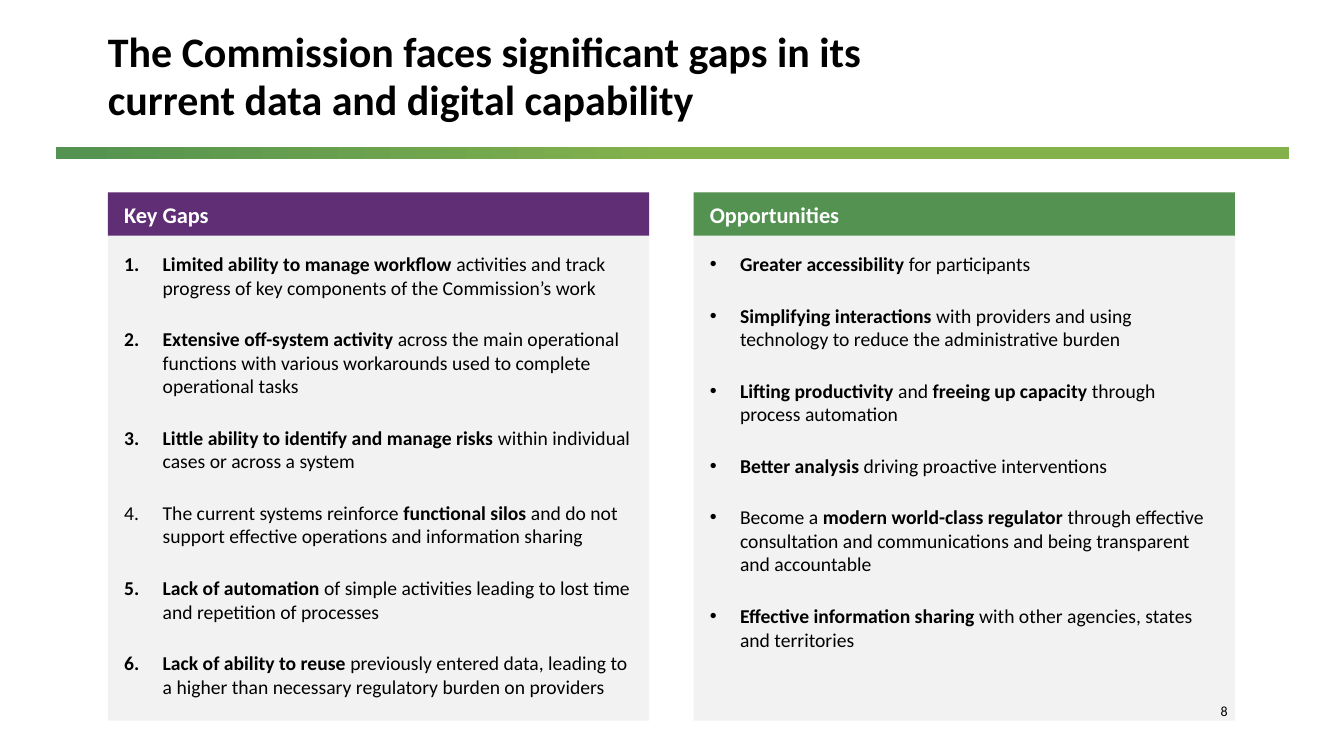
"""Build the slide on gaps and opportunities in data and digital capability."""
from dataclasses import dataclass

from lxml import etree
from pptx import Presentation
from pptx.dml.color import RGBColor
from pptx.enum.shapes import MSO_SHAPE
from pptx.enum.text import MSO_ANCHOR, MSO_AUTO_SIZE, PP_ALIGN
from pptx.oxml.ns import qn
from pptx.util import Cm, Pt

RECT = MSO_SHAPE.RECTANGLE
TOP, MIDDLE = MSO_ANCHOR.TOP, MSO_ANCHOR.MIDDLE
LEFT = PP_ALIGN.LEFT
NO_FIT = MSO_AUTO_SIZE.NONE

COLORS = {
    "text": "000000",
    "white": "FFFFFF",
    "panel": "F2F2F2",
    "purple": "5F2E74",
    "green": "539250",
    "lime": "83B14C",
}
PANEL_LEFT, PANEL_TOP = 2.72, 4.85
PANEL_WIDTH, PANEL_HEIGHT = 13.64, 13.31
PANEL_STEP = 14.76
HEADER_HEIGHT = 1.09
INSET = 0.41


@dataclass
class Panel:
    """A headed list; bold passages stand between double asterisks."""
    heading: str
    color: str
    indent: float
    bullet: tuple[str, str, str]
    items: list[str]


PANELS = [
    Panel("Key Gaps", "purple", 0.97, ("a:buAutoNum", "type", "arabicPeriod"), [
        "**Limited ability to manage workflow **activities and track progress "
        "of key components of the Commission’s work",
        "**Extensive off-system activity **across the main operational functions "
        "with various workarounds used to complete operational tasks",
        "**Little ability to identify and manage risks **within individual cases "
        "or across a system",
        "The current systems reinforce** functional silos **and do not support "
        "effective operations and information sharing",
        "**Lack of automation** of simple activities leading to lost time "
        "and repetition of processes",
        "**Lack of ability to reuse** previously entered data, leading to "
        "a higher than necessary regulatory burden on providers",
    ]),
    Panel("Opportunities", "green", 0.76, ("a:buChar", "char", "•"), [
        "**Greater accessibility **for participants",
        "**Simplifying interactions **with providers and using technology "
        "to reduce the administrative burden",
        "**Lifting productivity **and** freeing up capacity **through "
        "process automation",
        "**Better analysis **driving proactive interventions",
        "Become a **modern world-class regulator **through effective consultation "
        "and communications and being transparent and accountable",
        "**Effective information sharing **with other agencies, states "
        "and territories",
    ]),
]


def rgb(name: str) -> RGBColor:
    """Return the named colour."""
    return RGBColor.from_string(COLORS[name])


def apply(target, formats: dict) -> None:
    """Set every attribute in the dict on the target."""
    for name, value in formats.items():
        setattr(target, name, value)


def place(sp, left: float, top: float, width: float, height: float) -> None:
    """Move and size a shape, in centimetres."""
    apply(sp, {"left": Cm(left), "top": Cm(top),
               "width": Cm(width), "height": Cm(height)})


def set_frame(tf, anchor, side: float = 0, top: float = 0) -> None:
    """Set the wrapping, anchor and insets of a text frame."""
    apply(tf, {"word_wrap": True, "auto_size": NO_FIT, "vertical_anchor": anchor,
               "margin_left": Cm(side), "margin_right": Cm(side),
               "margin_top": Cm(top), "margin_bottom": 0})


def add_run(p, text: str, size: int, color: str = "text", bold: bool = False) -> None:
    """Add a formatted run to a paragraph."""
    r = p.add_run()
    r.text = text
    apply(r.font, {"name": "Calibri", "size": Pt(size), "bold": bold})
    r.font.color.rgb = rgb(color)


def add_rect(slide, left: float, top: float, width: float, height: float):
    """Add a rectangle without outline or shadow."""
    sp = slide.shapes.add_shape(RECT, Cm(left), Cm(top), Cm(width), Cm(height))
    sp.shadow.inherit = False
    sp.line.fill.background()
    return sp


def set_bullet(p, panel: Panel) -> None:
    """Give a paragraph the panel's hanging bullet or number."""
    indent = Cm(panel.indent)
    pPr = p._p.get_or_add_pPr()
    pPr.set("marL", str(indent))
    pPr.set("indent", str(-indent))
    tag, key, value = panel.bullet
    clr = etree.SubElement(pPr, qn("a:buClr"))
    etree.SubElement(clr, qn("a:srgbClr"), val=COLORS["text"])
    etree.SubElement(pPr, qn("a:buFont"),
                     typeface="Arial" if tag == "a:buChar" else "Calibri")
    etree.SubElement(pPr, qn(tag)).set(key, value)


def add_title(slide, text: str) -> None:
    """Fill the title placeholder."""
    sp = slide.shapes.title
    place(sp, PANEL_LEFT, 0, 21.69, 3.84)
    set_frame(sp.text_frame, MIDDLE)
    p = sp.text_frame.paragraphs[0]
    apply(p, {"alignment": LEFT, "line_spacing": Pt(34)})
    add_run(p, text, 30, bold=True)


def add_bar(slide) -> None:
    """Add the gradient bar under the title."""
    fill = add_rect(slide, 1.4, 3.71, 31.09, 0.3).fill
    fill.gradient()
    fill.gradient_angle = 0
    for stop, position, color in zip(fill.gradient_stops, (0, 0.5), ("green", "lime")):
        stop.position = position
        stop.color.rgb = rgb(color)


def add_panel(slide, sp, panel: Panel, left: float) -> None:
    """Fill a body placeholder with a list and add its heading."""
    place(sp, left, PANEL_TOP, PANEL_WIDTH, PANEL_HEIGHT)
    sp.fill.solid()
    sp.fill.fore_color.rgb = rgb("panel")
    tf = sp.text_frame
    set_frame(tf, TOP, INSET, 1.5)
    for i, item in enumerate(panel.items):
        p = tf.add_paragraph() if i else tf.paragraphs[0]
        set_bullet(p, panel)
        apply(p, {"alignment": LEFT, "space_before": Pt(10 if i else 0),
                  "space_after": Pt(10)})
        for k, text in enumerate(item.split("**")):
            if text:
                add_run(p, text, 14, bold=k % 2 == 1)

    header = add_rect(slide, left, PANEL_TOP, PANEL_WIDTH, HEADER_HEIGHT)
    header.fill.solid()
    header.fill.fore_color.rgb = rgb(panel.color)
    set_frame(header.text_frame, MIDDLE, INSET)
    p = header.text_frame.paragraphs[0]
    p.alignment = LEFT
    add_run(p, panel.heading, 16, "white", True)


def add_page_number(slide, number: str) -> None:
    """Add the page number at the lower right."""
    sp = slide.shapes.add_textbox(Cm(30.76), Cm(17.65), Cm(1.02), Cm(0.51))
    set_frame(sp.text_frame, MIDDLE)
    add_run(sp.text_frame.paragraphs[0], number, 10)


def main() -> None:
    """Build and save the presentation."""
    prs = Presentation()
    prs.slide_width, prs.slide_height = Cm(33.87), Cm(19.05)
    slide = prs.slides.add_slide(prs.slide_layouts[3])
    add_title(slide, "The Commission faces significant gaps in its "
                     "current data and digital capability")
    add_bar(slide)
    for i, panel in enumerate(PANELS):
        add_panel(slide, slide.placeholders[i + 1], panel, PANEL_LEFT + i * PANEL_STEP)
    add_page_number(slide, "8")
    prs.save("out.pptx")


if __name__ == "__main__":
    main()
